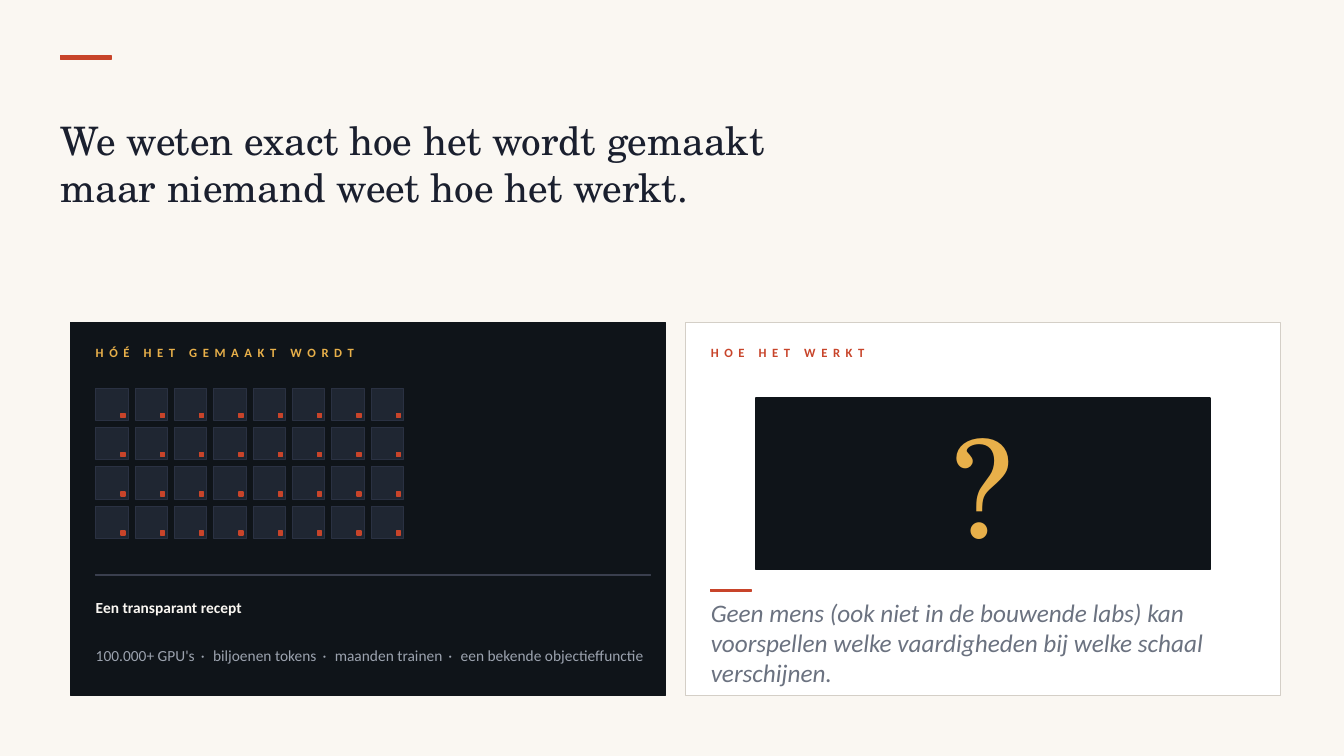
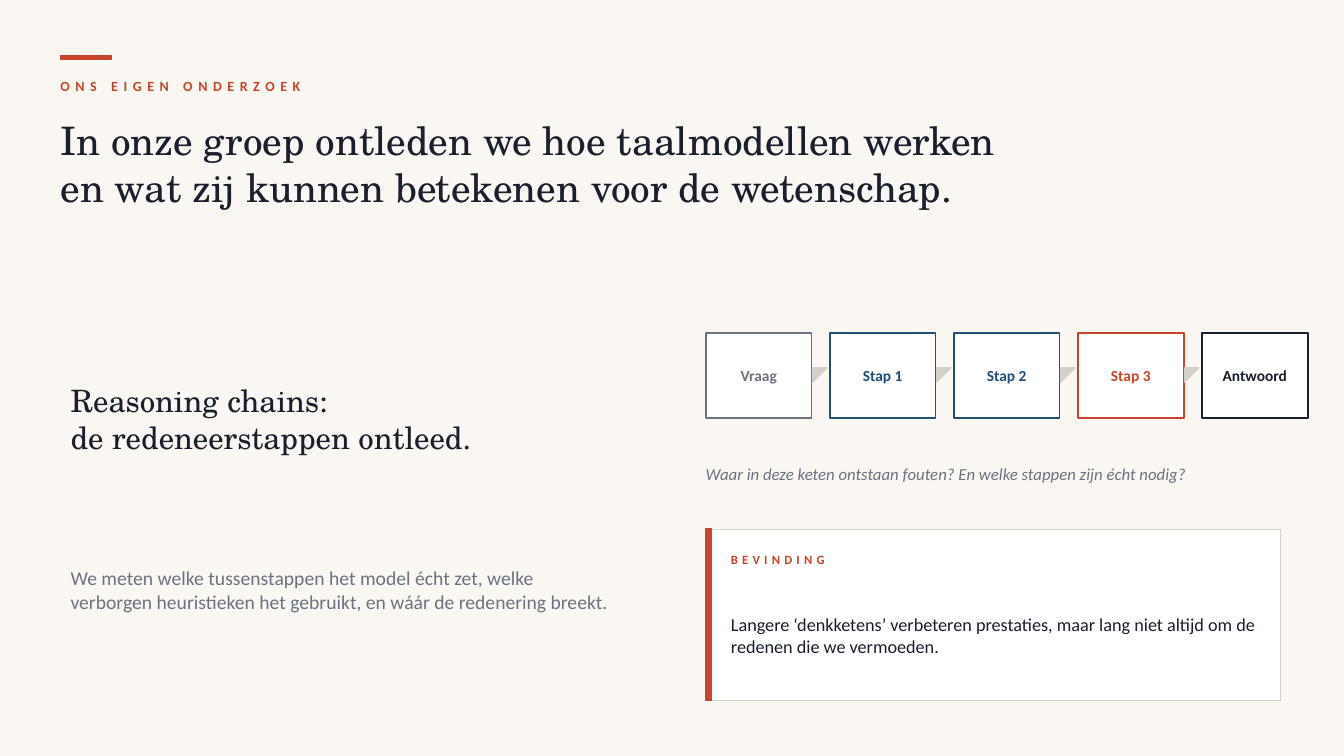
"""Build two slides on how language models are made and how they are studied."""
import dataclasses

import pptx
import pptx.dml.color
import pptx.enum.shapes
import pptx.enum.text
import pptx.util

Inches = pptx.util.Inches
Pt = pptx.util.Pt
Shapes = pptx.enum.shapes.MSO_SHAPE
Anchor = pptx.enum.text.MSO_ANCHOR
Align = pptx.enum.text.PP_ALIGN


@dataclasses.dataclass(frozen=True)
class Theme:
    serif: str = "TeX Gyre Schola"
    sans: str = "Calibri"
    paper: str = "FAF7F2"
    white: str = "FFFFFF"
    ink: str = "1A1F2E"
    night: str = "0F1419"
    accent: str = "C8442A"
    gold: str = "E8B04A"
    blue: str = "1F4E79"
    grey: str = "6B7280"
    pale_grey: str = "9CA3AF"
    border: str = "D4CFC7"
    chip: str = "1F2632"
    chip_border: str = "2A3142"
    divider: str = "3A3F4E"
    label: int = 9
    kicker: int = 10
    small: int = 11
    caption: int = 12
    finding: int = 13
    body: int = 14
    quote: int = 18
    subtitle: int = 22
    title: int = 28
    symbol: int = 96


THEME = Theme()

MAKING = {
    "title": ["We weten exact hoe het wordt gemaakt\vmaar niemand weet hoe het werkt."],
    "known_label": "HÓÉ HET GEMAAKT WORDT",
    "known_heading": "Een transparant recept",
    "recipe": ["100.000+ GPU's", "biljoenen tokens", "maanden trainen",
               "een bekende objectieffunctie"],
    "unknown_label": "HOE HET WERKT",
    "unknown_symbol": "?",
    "unknown_text": "Geen mens (ook niet in de bouwende labs) kan voorspellen "
                    "welke vaardigheden bij welke schaal verschijnen.",
}

RESEARCH = {
    "kicker": "ONS EIGEN ONDERZOEK",
    "title": ["In onze groep ontleden we hoe taalmodellen werken",
              "en wat zij kunnen betekenen voor de wetenschap."],
    "subtitle": ["Reasoning chains:", "de redeneerstappen ontleed."],
    "method": "We meten welke tussenstappen het model écht zet, welke verborgen "
              "heuristieken het gebruikt, en wáár de redenering breekt.",
    "steps": [("Vraag", THEME.grey), ("Stap 1", THEME.blue), ("Stap 2", THEME.blue),
              ("Stap 3", THEME.accent), ("Antwoord", THEME.ink)],
    "question": "Waar in deze keten ontstaan fouten? En welke stappen zijn écht nodig?",
    "finding_label": "BEVINDING",
    "finding": "Langere ‘denkketens’ verbeteren prestaties, maar lang niet altijd "
               "om de redenen die we vermoeden.",
}

CHIP_ROWS, CHIP_COLUMNS = 4, 8
CHIP_SIZE, CHIP_PITCH = 0.32, 0.39
LIGHT_OFFSET, LIGHT_SIZE = 0.25, 0.04
STEP_WIDTH, STEP_HEIGHT, STEP_PITCH = 1.05, 0.85, 1.23
CARD_TOP, CARD_WIDTH, CARD_HEIGHT, CARD_PADDING = 3.2, 5.9, 3.7, 0.25
SEPARATOR_SPACING = 1.7


def rgb(color):
    return pptx.dml.color.RGBColor.from_string(color)


def write_text(shape, paragraphs, *, size, color, font=THEME.sans, bold=False,
               italic=False, spacing=0, align=Align.LEFT, anchor=Anchor.MIDDLE):
    """Fill a shape with paragraphs, each a string or a list of (text, spacing) runs."""
    frame = shape.text_frame
    frame.word_wrap = True
    frame.vertical_anchor = anchor
    frame.margin_left = frame.margin_right = frame.margin_top = frame.margin_bottom = 0
    if isinstance(paragraphs, str):
        paragraphs = [paragraphs]
    for index, content in enumerate(paragraphs):
        paragraph = frame.add_paragraph() if index else frame.paragraphs[0]
        paragraph.alignment = align
        runs = [(content, spacing)] if isinstance(content, str) else content
        for text, run_spacing in runs:
            for line_index, line in enumerate(text.split("\v")):
                if line_index:
                    paragraph.add_line_break()
                run = paragraph.add_run()
                run.text = line
                run.font.name = font
                run.font.size = Pt(size)
                run.font.bold = bold
                run.font.italic = italic
                run.font.color.rgb = rgb(color)
                if run_spacing:
                    run._r.get_or_add_rPr().set("spc", str(round(run_spacing * 100)))


def add_text(slide, box, paragraphs, **text_format):
    shape = slide.shapes.add_textbox(*map(Inches, box))
    write_text(shape, paragraphs, **text_format)


def add_block(slide, box, fill, line=None, line_width=1, kind=Shapes.RECTANGLE):
    shape = slide.shapes.add_shape(kind, *map(Inches, box))
    shape.shadow.inherit = False
    shape.fill.solid()
    shape.fill.fore_color.rgb = rgb(fill)
    shape.line.color.rgb = rgb(line or fill)
    shape.line.width = Pt(line_width)
    return shape


def add_label(slide, box, text, color=THEME.accent, size=THEME.label, spacing=4):
    add_text(slide, box, text, size=size, color=color, bold=True, spacing=spacing)


def add_titled_slide(presentation, title, kicker=None):
    slide = presentation.slides.add_slide(presentation.slide_layouts[6])
    add_block(slide, (0.6, 0.55, 0.5, 0.04), THEME.accent)
    if kicker:
        add_label(slide, (0.6, 0.7, 8, 0.3), kicker, size=THEME.kicker)
    add_text(slide, (0.6, 1.15, 12, 1.8), title, size=THEME.title, color=THEME.ink,
             font=THEME.serif, anchor=Anchor.TOP)
    return slide


def add_card(slide, left, label, label_color, fill, line, line_width):
    add_block(slide, (left, CARD_TOP, CARD_WIDTH, CARD_HEIGHT), fill, line, line_width)
    inner_left = left + CARD_PADDING
    add_label(slide, (inner_left, CARD_TOP + 0.15, 5.5, 0.3), label, label_color)
    return inner_left


def add_chip_grid(slide, left, top):
    for row in range(CHIP_ROWS):
        for column in range(CHIP_COLUMNS):
            x, y = left + column * CHIP_PITCH, top + row * CHIP_PITCH
            add_block(slide, (x, y, CHIP_SIZE, CHIP_SIZE), THEME.chip,
                      THEME.chip_border, 0.5)
            add_block(slide, (x + LIGHT_OFFSET, y + LIGHT_OFFSET, LIGHT_SIZE, LIGHT_SIZE),
                      THEME.accent)


def build_making_slide(presentation):
    slide = add_titled_slide(presentation, MAKING["title"])

    left = add_card(slide, 0.7, MAKING["known_label"], THEME.gold,
                    THEME.night, THEME.night, 1)
    add_chip_grid(slide, left, 3.85)
    add_block(slide, (left, 5.7, 5.5, 0.01), THEME.divider)
    add_text(slide, (left, 5.85, 5.5, 0.35), MAKING["known_heading"],
             size=THEME.small, color=THEME.paper, bold=True)
    recipe_runs = []
    for ingredient in MAKING["recipe"]:
        if recipe_runs:
            recipe_runs.append((" · ", SEPARATOR_SPACING))
        recipe_runs.append((ingredient, 0))
    add_text(slide, (left, 6.2, 5.5, 0.6), [recipe_runs],
             size=THEME.small, color=THEME.pale_grey)

    left = add_card(slide, 6.8, MAKING["unknown_label"], THEME.accent,
                    THEME.white, THEME.border, 0.75)
    black_box = add_block(slide, (7.5, 3.95, 4.5, 1.7), THEME.night)
    write_text(black_box, MAKING["unknown_symbol"], size=THEME.symbol, color=THEME.gold,
               font=THEME.serif, align=Align.CENTER)
    add_block(slide, (left, 5.85, 0.4, 0.02), THEME.accent)
    add_text(slide, (left, 5.95, 5.4, 0.85), MAKING["unknown_text"],
             size=THEME.quote, color=THEME.grey, italic=True)


def add_step_chain(slide, left, top, steps):
    for index, (name, color) in enumerate(steps):
        x = left + index * STEP_PITCH
        if index:
            arrow = add_block(slide, (x - 0.17, top + 0.35, 0.14, 0.14), THEME.border,
                              kind=Shapes.RIGHT_TRIANGLE)
            arrow.rotation = 90
        step = add_block(slide, (x, top, STEP_WIDTH, STEP_HEIGHT), THEME.white, color, 1.25)
        write_text(step, name, size=THEME.small, color=color, bold=True,
                   align=Align.CENTER)


def build_research_slide(presentation):
    slide = add_titled_slide(presentation, RESEARCH["title"], RESEARCH["kicker"])
    add_text(slide, (0.7, 3.55, 5.4, 1.2), RESEARCH["subtitle"],
             size=THEME.subtitle, color=THEME.ink, font=THEME.serif)
    add_text(slide, (0.7, 4.85, 5.4, 2), RESEARCH["method"],
             size=THEME.body, color=THEME.grey)
    add_step_chain(slide, 7, 3.3, RESEARCH["steps"])
    add_text(slide, (7, 4.4, 5.7, 0.6), RESEARCH["question"],
             size=THEME.caption, color=THEME.grey, italic=True)
    add_block(slide, (7, 5.25, 5.7, 1.7), THEME.white, THEME.border, 0.75)
    add_block(slide, (7, 5.25, 0.06, 1.7), THEME.accent)
    add_label(slide, (7.25, 5.4, 5.4, 0.3), RESEARCH["finding_label"], spacing=3)
    add_text(slide, (7.25, 5.7, 5.4, 1.2), RESEARCH["finding"],
             size=THEME.finding, color=THEME.ink)


def main():
    presentation = pptx.Presentation()
    presentation.slide_width = Inches(13.33)
    presentation.slide_height = Inches(7.5)
    background = presentation.slide_master.background.fill
    background.solid()
    background.fore_color.rgb = rgb(THEME.paper)
    build_making_slide(presentation)
    build_research_slide(presentation)
    presentation.save("out.pptx")


if __name__ == "__main__":
    main()
